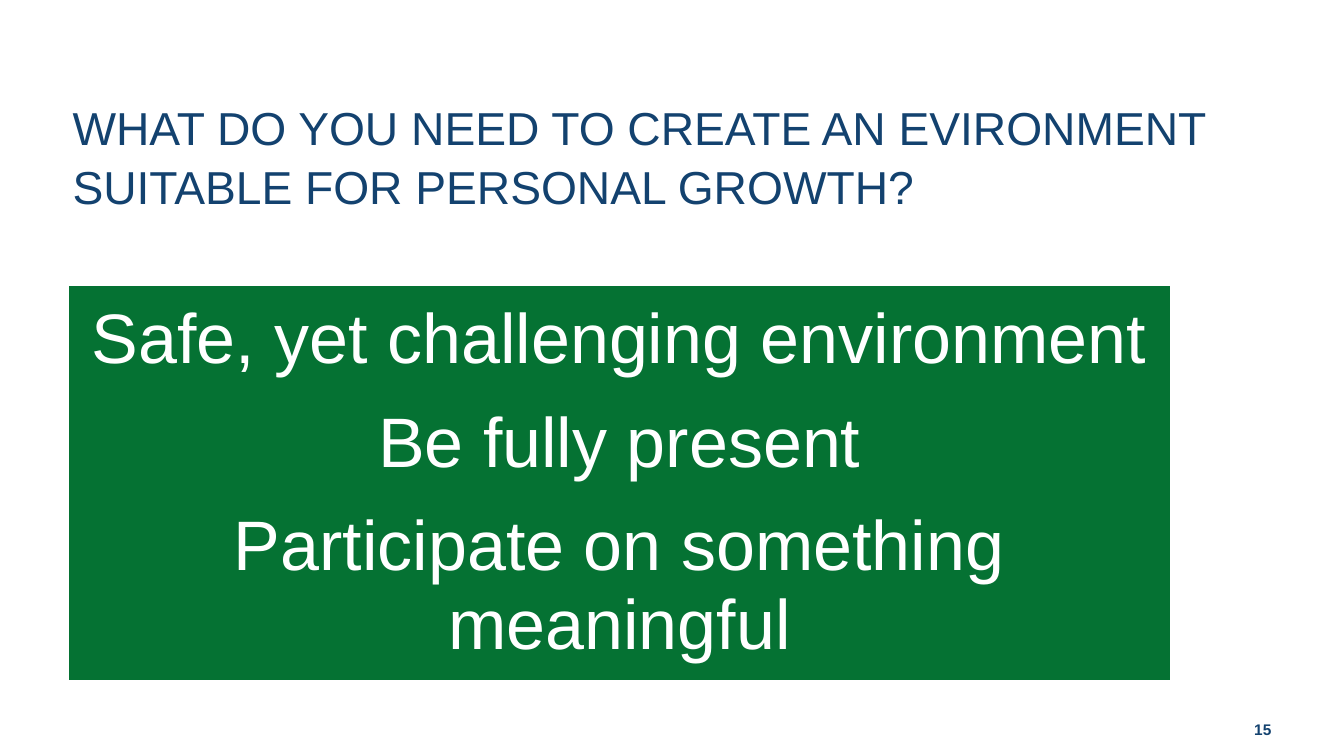
from pptx import Presentation
from pptx.dml.color import RGBColor
from pptx.enum.shapes import MSO_SHAPE
from pptx.enum.text import MSO_ANCHOR, MSO_AUTO_SIZE, PP_ALIGN
from pptx.util import Inches, Pt

COLORS = {"navy": "13426F", "green": "057233", "white": "FFFFFF"}
NEEDS = [
    "Safe, yet challenging environment",
    "Be fully present",
    "Participate on something meaningful",
]


def color(name):
    return RGBColor.from_string(COLORS[name])


def place(sp, box):
    sp.left, sp.top, sp.width, sp.height = (Inches(v) for v in box)


def write(sp, lines, size, ink, align, anchor, insets, spacing, after=0, bold=False):
    tf = sp.text_frame
    tf.text = "\n".join(lines)
    tf.word_wrap = True
    tf.auto_size = MSO_AUTO_SIZE.NONE
    tf.vertical_anchor = anchor
    tf.margin_left, tf.margin_top, tf.margin_right, tf.margin_bottom = (
        Inches(v) for v in insets)
    for p in tf.paragraphs:
        p.alignment = align
        p.line_spacing = spacing
        p.space_before = Pt(0)
        p.space_after = Pt(after)
        for r in p.runs:
            r.font.name = "Arial"
            r.font.size = Pt(size)
            r.font.bold = bold
            r.font.color.rgb = color(ink)


def add_title(s, box, text):
    sp = s.shapes.title
    place(sp, box)
    write(sp, [text], 33, "navy", PP_ALIGN.LEFT, MSO_ANCHOR.MIDDLE,
          (0.71, 0.05, 0.1, 0.05), 1.07)


def add_needs_panel(s, box, needs):
    sp = s.shapes.add_shape(MSO_SHAPE.RECTANGLE, *(Inches(v) for v in box))
    sp.shadow.inherit = False
    sp.fill.solid()
    sp.fill.fore_color.rgb = color("green")
    sp.line.color.rgb = color("white")
    sp.line.width = Pt(2)
    write(sp, needs, 50, "white", PP_ALIGN.CENTER, MSO_ANCHOR.MIDDLE,
          (0.21, 0.21, 0.21, 0.21), 0.94, after=17.5)


def add_page_number(s, box, number):
    sp = s.shapes.add_textbox(*(Inches(v) for v in box))
    write(sp, [number], 11, "navy", PP_ALIGN.RIGHT, MSO_ANCHOR.BOTTOM,
          (0, 0.05, 0.71, 0.16), 1.21, bold=True)


def main():
    prs = Presentation()
    prs.slide_width, prs.slide_height = Inches(13.33), Inches(7.5)
    s = prs.slides.add_slide(prs.slide_layouts[5])

    # Question
    add_title(s, (0.01, 0.74, 12.28, 1.59),
              "WHAT DO YOU NEED TO CREATE AN EVIRONMENT SUITABLE FOR PERSONAL GROWTH?")
    # Answers
    add_needs_panel(s, (0.67, 2.82, 10.95, 3.94), NEEDS)
    # Footer
    add_page_number(s, (10.32, 6.89, 3, 0.6), "15")

    prs.save("out.pptx")


if __name__ == "__main__":
    main()
